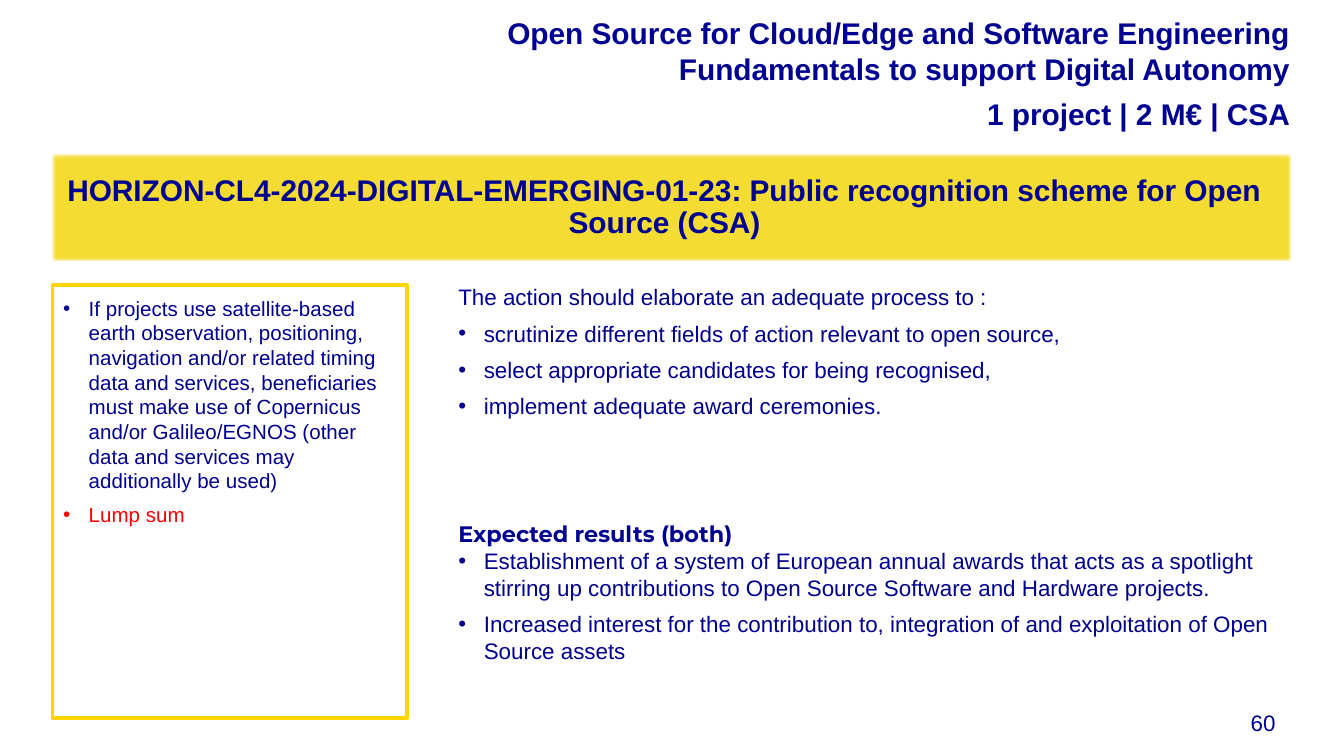
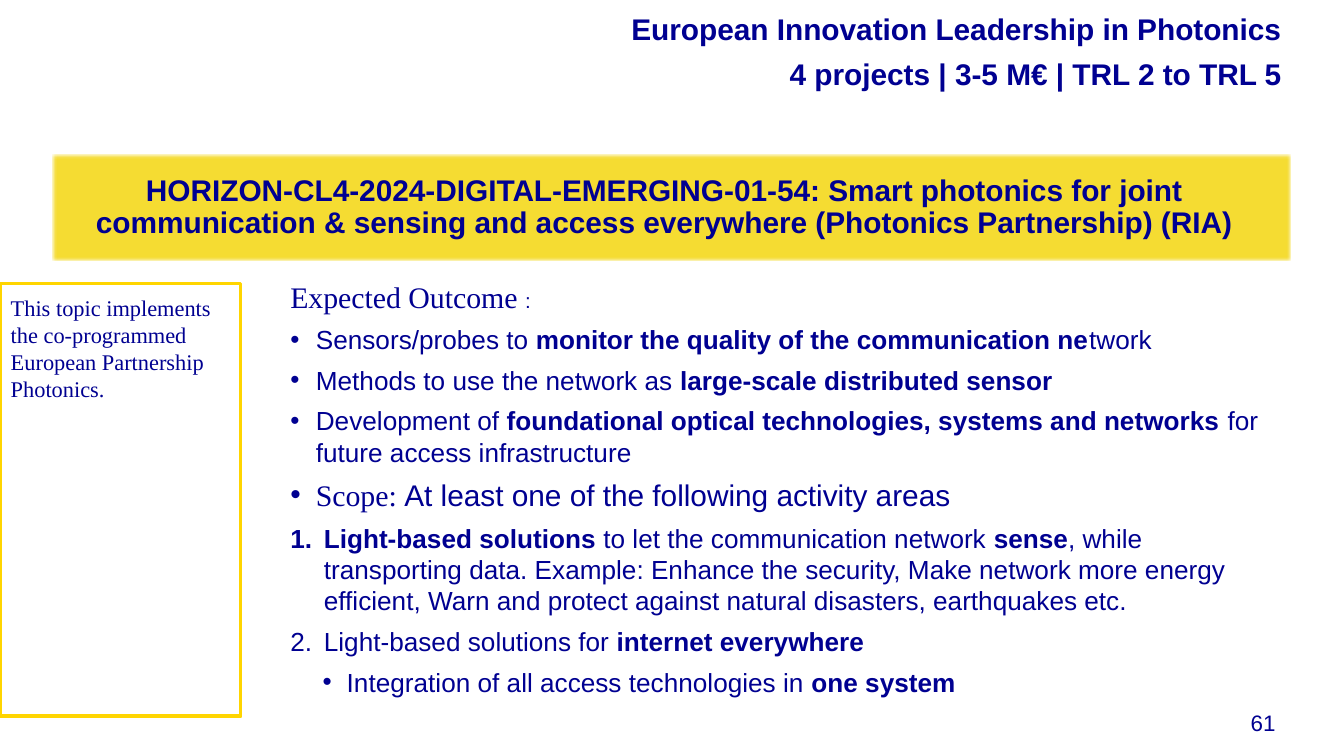
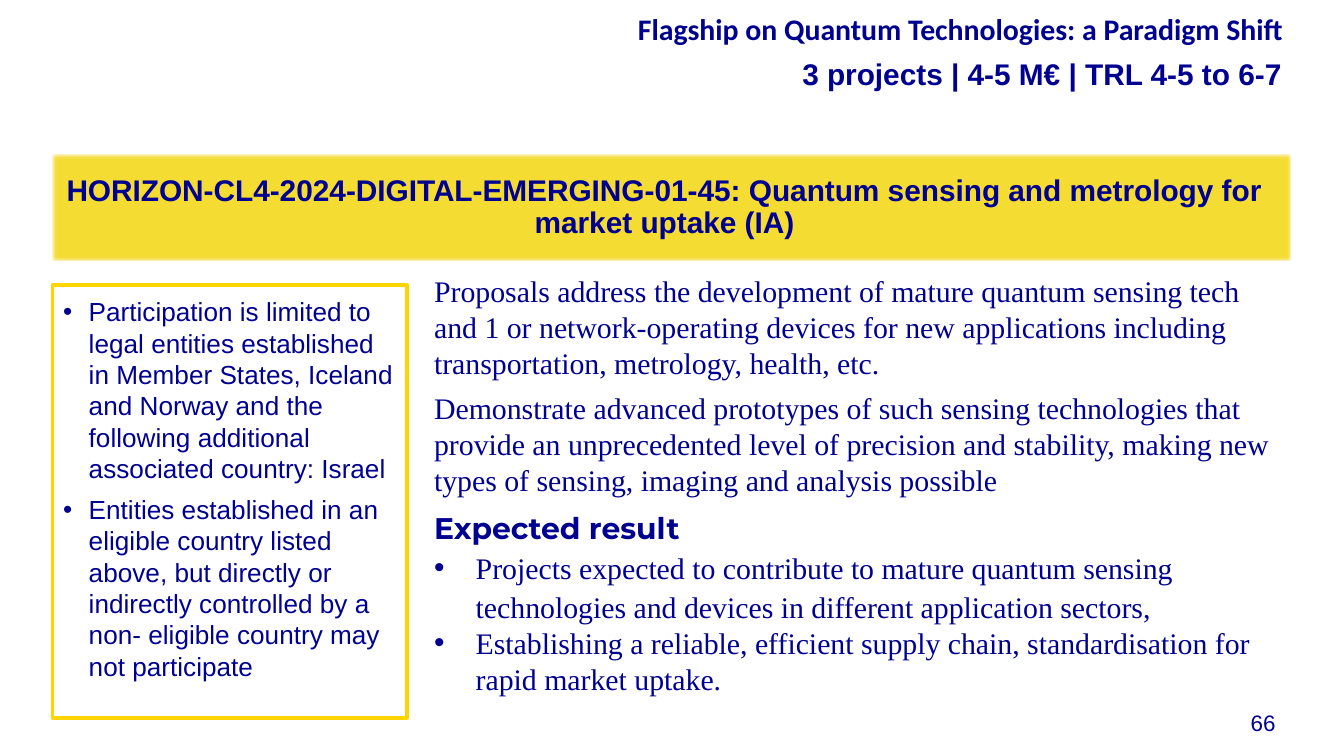
from dataclasses import dataclass, replace
from typing import Optional

from lxml.etree import SubElement
from pptx import Presentation
from pptx.dml.color import RGBColor
from pptx.enum.text import MSO_ANCHOR as Anchor, MSO_AUTO_SIZE as AutoSize, PP_ALIGN as Align
from pptx.oxml.ns import qn
from pptx.util import Inches, Pt

NAVY = RGBColor(0x00, 0x00, 0x91)
BAND_YELLOW = RGBColor(0xF5, 0xDC, 0x32)
BORDER_YELLOW = RGBColor(0xFF, 0xD5, 0x00)
RED = RGBColor(0xFF, 0x00, 0x00)

SANS = "Arial"
SERIF = "Times New Roman"
HEADING = "Montserrat"
HUMANIST = "Calibri"

COMPARISON_LAYOUT = 4
HEADER, PANEL, CONTENT, UNUSED = 1, 2, 3, 4


@dataclass(frozen=True)
class Span:
    text: str
    size: float = 12
    font: str = SANS
    color: RGBColor = NAVY
    bold: bool = False


@dataclass(frozen=True)
class Para:
    spans: tuple[Span, ...]
    bullet: Optional[str] = None
    margin: float = 0
    hanging: float = 0
    before: float = 0
    after: float = 5
    spacing: float = 1
    align: Align = Align.LEFT


@dataclass(frozen=True)
class Area:
    left: float
    top: float
    width: float
    height: float


@dataclass(frozen=True)
class Topic:
    number: int
    title: str
    header: tuple[Span, ...]
    panel: tuple[Para, ...]
    content: tuple[Para, ...]
    content_area: Area
    panel_area: Area = Area(0.39, 2.12, 2.64, 3.22)
    header_bottom: float = 0.33


TITLE_AREA = Area(0.39, 1.15, 9.21, 0.79)
HEADER_AREA = Area(2.7, 0.15, 6.9, 0.79)
NUMBER_AREA = Area(8.31, 5.23, 1.28, 0.39)


def plain(text: str, **style) -> Para:
    return Para((Span(text, **style),))


def bullet(*spans: Span) -> Para:
    return Para(spans, bullet="•", margin=0.19, hanging=0.19)


def numbered(*spans: Span) -> Para:
    return Para(spans, bullet="arabicPeriod", margin=0.25, hanging=0.25)


def heading(text: str, size: float, before: float = 0) -> Para:
    span = Span(text, size, HEADING, bold=True)
    return Para((span,), before=before, after=0, spacing=1.1)


def mixed(*texts: str, size: float = 14, bold_first: bool = False) -> tuple[Span, ...]:
    return tuple(Span(text, size, bold=(index % 2 == 0) == bold_first)
                 for index, text in enumerate(texts))


def add_span(para, text: str, *, size: float, font: str, color: RGBColor, bold: bool) -> None:
    run = para.add_run()
    run.text = text
    run.font.size = Pt(size)
    run.font.name = font
    run.font.color.rgb = color
    run.font.bold = bold


def set_bullet(para, item: Para) -> None:
    properties = para._p.get_or_add_pPr()
    properties.set("marL", str(Inches(item.margin)))
    properties.set("indent", str(Inches(-item.hanging)))
    if item.bullet is None:
        SubElement(properties, qn("a:buNone"))
    elif item.bullet == "arabicPeriod":
        SubElement(properties, qn("a:buAutoNum")).set("type", item.bullet)
    else:
        SubElement(properties, qn("a:buChar")).set("char", item.bullet)


def write_paras(frame, paras: tuple[Para, ...]) -> None:
    for index, item in enumerate(paras):
        para = frame.paragraphs[0] if index == 0 else frame.add_paragraph()
        set_bullet(para, item)
        para.alignment = item.align
        para.line_spacing = item.spacing
        para.space_before = Pt(item.before)
        para.space_after = Pt(item.after)
        for span in item.spans:
            add_span(para, span.text, size=span.size, font=span.font,
                     color=span.color, bold=span.bold)


def fill_box(box, area: Area, paras: tuple[Para, ...], *, anchor: Anchor = Anchor.TOP,
             insets: tuple[float, float, float, float] = (0, 0, 0, 0)) -> None:
    box.left, box.top = Inches(area.left), Inches(area.top)
    box.width, box.height = Inches(area.width), Inches(area.height)
    frame = box.text_frame
    frame.word_wrap = True
    frame.auto_size = AutoSize.NONE
    frame.vertical_anchor = anchor
    (frame.margin_left, frame.margin_top,
     frame.margin_right, frame.margin_bottom) = map(Inches, insets)
    write_paras(frame, paras)


def soften_edges(box) -> None:
    effects = SubElement(box._element.spPr, qn("a:effectLst"))
    SubElement(effects, qn("a:softEdge")).set("rad", str(Pt(1)))


def add_topic(deck, topic: Topic) -> None:
    page = deck.slides.add_slide(deck.slide_layouts[COMPARISON_LAYOUT])
    boxes = {box.placeholder_format.idx: box for box in page.placeholders}
    unused = boxes[UNUSED]._element
    unused.getparent().remove(unused)

    band = page.shapes.title
    title = Para((Span(topic.title, 16, bold=True),), after=0, spacing=0.9, align=Align.CENTER)
    fill_box(band, TITLE_AREA, (title,), anchor=Anchor.MIDDLE, insets=(0, 0, 0.1, 0))
    band.fill.solid()
    band.fill.fore_color.rgb = BAND_YELLOW
    soften_edges(band)

    number_box = page.shapes.add_textbox(0, 0, 0, 0)
    number = replace(plain(str(topic.number)), after=0, align=Align.RIGHT)
    fill_box(number_box, NUMBER_AREA, (number,), insets=(0.1, 0.05, 0.1, 0.05))

    header = tuple(Para((span,), align=Align.RIGHT) for span in topic.header)
    fill_box(boxes[HEADER], HEADER_AREA, header, anchor=Anchor.MIDDLE,
             insets=(0, 0, 0, topic.header_bottom))

    panel = boxes[PANEL]
    fill_box(panel, topic.panel_area, topic.panel, insets=(0.08,) * 4)
    panel.line.color.rgb = BORDER_YELLOW
    panel.line.width = Pt(2)

    fill_box(boxes[CONTENT], topic.content_area, topic.content)


TOPICS = (
    Topic(
        number=60,
        title="HORIZON-CL4-2024-DIGITAL-EMERGING-01-23: Public recognition scheme for Open Source (CSA)",
        header=(
            Span("Open Source for Cloud/Edge and Software Engineering Fundamentals "
                 "to support Digital Autonomy", 16, bold=True),
            Span("1 project | 2 M€ | CSA", 16, bold=True),
        ),
        header_bottom=0,
        panel=(
            bullet(Span("If projects use satellite-based earth observation, positioning, "
                        "navigation and/or related timing data and services, beneficiaries "
                        "must make use of Copernicus and/or Galileo/EGNOS (other data and "
                        "services may additionally be used)", 11)),
            bullet(Span("Lump sum", 11, color=RED)),
        ),
        content_area=Area(3.41, 2.11, 6.27, 3.31),
        content=(
            plain("The action should elaborate an adequate process to :"),
            bullet(Span("scrutinize different fields of action relevant to open source,")),
            bullet(Span("select appropriate candidates for being recognised,")),
            bullet(Span("implement adequate award ceremonies.")),
            heading("Expected results (both)", 12, before=48),
            bullet(Span("Establishment of a system of European annual awards that acts as a "
                        "spotlight stirring up contributions to Open Source Software and "
                        "Hardware projects.")),
            bullet(Span("Increased interest for the contribution to, integration of and "
                        "exploitation of Open Source assets")),
        ),
    ),
    Topic(
        number=61,
        title="HORIZON-CL4-2024-DIGITAL-EMERGING-01-54: Smart photonics for joint "
              "communication & sensing and access everywhere (Photonics Partnership) (RIA)",
        header=(
            Span("European Innovation Leadership in Photonics ", 16, bold=True),
            Span("4 projects | 3-5 M€ | TRL 2 to TRL 5 ", 16, bold=True),
        ),
        panel_area=Area(0, 2.11, 1.79, 3.22),
        panel=(plain("This topic implements the co-programmed European Partnership Photonics.",
                     font=SERIF),),
        content_area=Area(2.16, 2.07, 7.42, 3.31),
        content=(
            Para((Span("Expected Outcome ", 16, SERIF), Span(":", 11))),
            bullet(*mixed("Sensors/probes to ", "monitor the quality of the communication ne",
                          "twork")),
            bullet(*mixed("Methods to use the network as ", "large-scale distributed sensor")),
            bullet(*mixed("Development of ",
                          "foundational optical technologies, systems and networks ",
                          "for future access infrastructure")),
            bullet(Span("Scope: ", 16, SERIF),
                   Span("At least one of the following activity areas", 16)),
            numbered(*mixed("Light-based solutions ", "to let the communication network ",
                            "sense",
                            ", while transporting data. Example: Enhance the security, Make "
                            "network more energy efficient, Warn and protect against natural "
                            "disasters, earthquakes etc.", bold_first=True)),
            numbered(*mixed("Light-based solutions for ", "internet everywhere")),
            Para(mixed("Integration of all access technologies in ", "one system"),
                 bullet="•", margin=0.42, hanging=0.18),
        ),
    ),
    Topic(
        number=66,
        title="HORIZON-CL4-2024-DIGITAL-EMERGING-01-45: Quantum sensing and metrology for "
              "market uptake (IA)",
        header=(
            Span("Flagship on Quantum Technologies: a Paradigm Shift ", 16, HUMANIST, bold=True),
            Span("3 projects | 4-5 M€ | TRL 4-5 to 6-7 ", 16, bold=True),
        ),
        panel=(
            bullet(Span("Participation is limited to legal entities established in Member "
                        "States, Iceland and Norway and the following additional associated "
                        "country: Israel", 14)),
            bullet(Span("Entities established in an eligible country listed above, but directly "
                        "or indirectly controlled by a non- eligible country may not "
                        "participate", 14)),
        ),
        content_area=Area(3.23, 2.03, 6.27, 3.31),
        content=(
            plain("Proposals address the development of mature quantum sensing tech and 1 or "
                  "network-operating devices for new applications including transportation, "
                  "metrology, health, etc.", size=16, font=SERIF),
            plain("Demonstrate advanced prototypes of such sensing technologies that provide an "
                  "unprecedented level of precision and stability, making new types of sensing, "
                  "imaging and analysis possible", size=16, font=SERIF),
            heading("Expected result", 16),
            Para((Span("Projects expected to contribute to mature quantum sensing technologies "
                       "and devices in different application sectors,", 16, SERIF),),
                 bullet="•", margin=0.31, hanging=0.31, after=0, spacing=1.1),
            Para((Span("Establishing a reliable, efficient supply chain, standardisation for "
                       "rapid market uptake.", 16, SERIF),),
                 bullet="•", margin=0.31, hanging=0.31),
        ),
    ),
)


def main() -> None:
    deck = Presentation()
    deck.slide_width = Inches(10)
    deck.slide_height = deck.slide_width * 9 // 16
    for topic in TOPICS:
        add_topic(deck, topic)
    deck.save("out.pptx")


if __name__ == "__main__":
    main()
